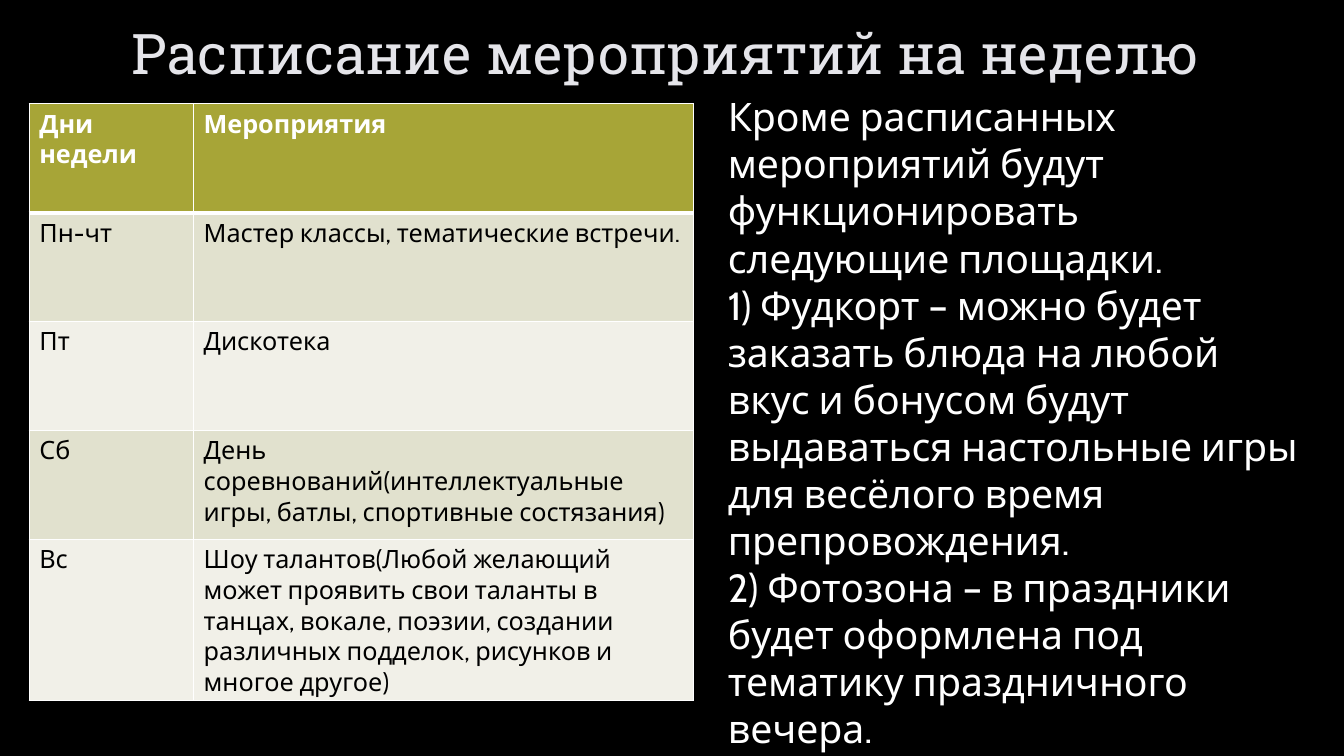
from dataclasses import dataclass

from lxml import etree
from pptx import Presentation
from pptx.dml.color import RGBColor
from pptx.enum.text import MSO_ANCHOR, PP_ALIGN
from pptx.oxml.ns import qn
from pptx.util import Inches, Pt

LEFT, CENTER = PP_ALIGN.LEFT, PP_ALIGN.CENTER
TOP, MIDDLE = MSO_ANCHOR.TOP, MSO_ANCHOR.MIDDLE
BODY_FONT, TITLE_FONT = "Cabin", "Roboto Slab"
COLORS = {
    "background": "000000",
    "title": "E5E5EA",
    "title_outline": "404040",
    "light": "FFFFFF",
    "dark": "000000",
    "header": "A7A537",
    "odd_row": "E1E1CE",
    "even_row": "F1F0E8",
}


@dataclass
class DayPlan:
    days: str
    events: str


HEADER = DayPlan("Дни недели", "Мероприятия")
WEEK = [
    DayPlan("Пн-чт", "Мастер классы, тематические встречи."),
    DayPlan("Пт", "Дискотека"),
    DayPlan("Сб", "День соревнований(интеллектуальные игры, батлы, "
                  "спортивные состязания)"),
    DayPlan("Вс", "Шоу талантов(Любой желающий может проявить свои таланты в танцах, "
                  "вокале, поэзии, создании различных подделок, рисунков и многое другое)"),
]
VENUES = [
    "Кроме расписанных мероприятий будут функционировать следующие площадки.",
    "1) Фудкорт – можно будет заказать блюда на любой вкус и бонусом будут "
    "выдаваться настольные игры для весёлого время препровождения.",
    "2) Фотозона – в праздники будет оформлена под тематику праздничного вечера.",
]
COLUMN_WIDTHS = (1.63, 4.96)
ROW_HEIGHT = 1.08


def rgb(name: str) -> RGBColor:
    return RGBColor.from_string(COLORS[name])


def add_line(parent, tag: str, color: str, points: float, alpha: int = 100) -> None:
    """Add a solid line, such as a cell edge or a text outline, as first child."""
    line = etree.Element(qn(tag), w=str(Pt(points)))
    fill = etree.SubElement(line, qn("a:solidFill"))
    shade = etree.SubElement(fill, qn("a:srgbClr"), val=COLORS[color])
    if alpha < 100:
        etree.SubElement(shade, qn("a:alpha"), val=str(alpha * 1000))
    parent.insert(0, line)


def write(frame, paragraphs: list[str], *, size: float, color: str,
          font: str = BODY_FONT, bold: bool = False, align=LEFT, anchor=TOP):
    """Fill a text frame and return its last run."""
    frame.word_wrap = True
    frame.vertical_anchor = anchor
    for index, text in enumerate(paragraphs):
        paragraph = frame.add_paragraph() if index else frame.paragraphs[0]
        paragraph.alignment = align
        run = paragraph.add_run()
        run.text = text
        run.font.name, run.font.size, run.font.bold = font, Pt(size), bold
        run.font.color.rgb = rgb(color)
    return run


def add_text(slide, left: float, top: float, width: float, height: float,
             paragraphs: list[str], **style):
    box = slide.shapes.add_textbox(*map(Inches, (left, top, width, height)))
    return write(box.text_frame, paragraphs, **style)


def add_schedule(slide, left: float, top: float, plans: list[DayPlan]) -> None:
    table = slide.shapes.add_table(
        len(plans), len(COLUMN_WIDTHS), Inches(left), Inches(top),
        Inches(sum(COLUMN_WIDTHS)), Inches(ROW_HEIGHT * len(plans))).table
    for column, width in zip(table.columns, COLUMN_WIDTHS):
        column.width = Inches(width)
    for row, plan in enumerate(plans):
        is_header = row == 0
        fill = "header" if is_header else "odd_row" if row % 2 else "even_row"
        for col, text in enumerate((plan.days, plan.events)):
            cell = table.cell(row, col)
            write(cell.text_frame, [text], size=18, bold=is_header,
                  color="light" if is_header else "dark")
            cell.fill.solid()
            cell.fill.fore_color.rgb = rgb(fill)
            # Thick rule below the header, thin rules elsewhere
            edges = {"a:lnB": 3 if is_header else 1, "a:lnT": 3 if row == 1 else 1,
                     "a:lnR": 1, "a:lnL": 1}
            for tag, points in edges.items():
                add_line(cell.fill._xPr, tag, "light", points)


def main() -> None:
    deck = Presentation()
    deck.slide_width, deck.slide_height = Inches(13.33), Inches(7.5)
    slide = deck.slides.add_slide(deck.slide_layouts[6])
    slide.background.fill.solid()
    slide.background.fill.fore_color.rgb = rgb("background")

    # Title
    title = add_text(slide, 0.94, 0, 11.32, 1.03, ["Расписание мероприятий на неделю"],
                     size=40, color="title", font=TITLE_FONT, align=CENTER, anchor=MIDDLE)
    add_line(title._r.get_or_add_rPr(), "a:ln", "title_outline", 0.75, alpha=10)

    # Weekly schedule
    add_schedule(slide, 0.29, 1.03, [HEADER, *WEEK])

    # Additional venues
    add_text(slide, 7.12, 0.87, 5.93, 5.76, VENUES, size=28, color="light")

    deck.save("out.pptx")


if __name__ == "__main__":
    main()
